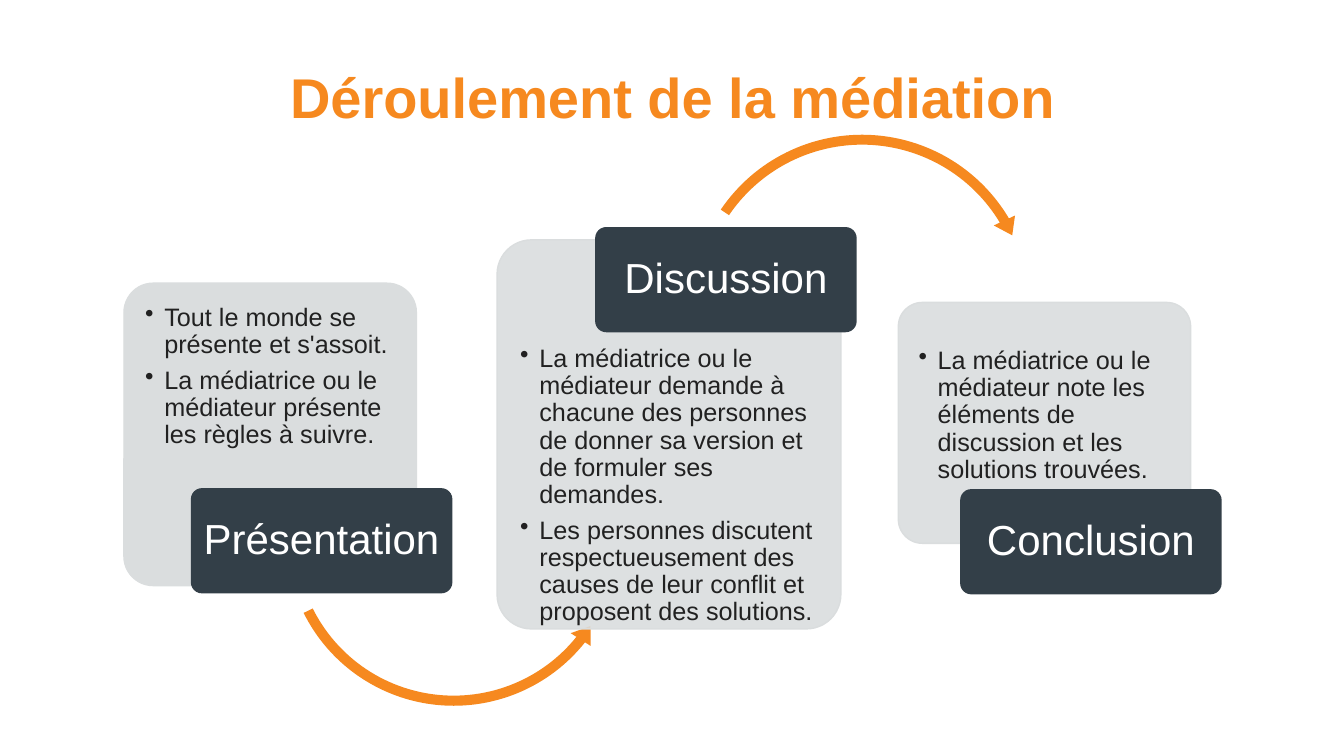
from lxml.etree import SubElement
from pptx import Presentation
from pptx.dml.color import RGBColor
from pptx.enum.shapes import MSO_SHAPE
from pptx.enum.text import MSO_ANCHOR, PP_ALIGN
from pptx.oxml.ns import qn
from pptx.util import Inches, Pt

ORANGE, GREY, NAVY, INK, WHITE = "F6891F", "DADDDE", "333F48", "212121", "FFFFFF"

STEPS = [
    dict(card=(1.23, 2.81, 2.9, 3), body=(0.07, 0.07, 2.76, 2.22),
         tag=(0.67, 2.04), name="Présentation", alpha=100,
         arrow=(MSO_SHAPE.LEFT_CIRCULAR_ARROW, (1.54, 0.8, 3.46, 3.46),
                (0.029, 3.537, 23.156, 92.108, 0.034)),
         lines=["Tout le monde se présente et s'assoit.",
                "La médiatrice ou le médiateur présente les règles à suivre."]),
    dict(card=(4.93, 2.38, 3.41, 3.86), body=(0.09, 0.91, 3.23, 2.86),
         tag=(0.98, -0.12), name="Discussion", alpha=90,
         arrow=(MSO_SHAPE.CIRCULAR_ARROW, (1.86, -1.11, 3.52, 3.52),
                (0.028, 3.476, 197.501, 128.487, 0.033)),
         lines=["La médiatrice ou le médiateur demande à chacune des personnes "
                "de donner sa version et de formuler ses demandes.",
                "Les personnes discutent respectueusement des causes de leur "
                "conflit et proposent des solutions."]),
    dict(card=(8.91, 3, 2.9, 2.39), body=(0.06, 0.31, 2.79, 1.52),
         tag=(0.62, 1.86), name="Conclusion", alpha=90, arrow=None,
         lines=["La médiatrice ou le médiateur note les éléments de discussion "
                "et les solutions trouvées."]),
]


def color(code):
    return RGBColor.from_string(code)


def inch(box):
    return [Inches(v) for v in box]


def shift(card, part):
    return (card[0] + part[0], card[1] + part[1], *part[2:])


def shape(slide, kind, box, fill, adjust, line=None, alpha=100):
    item = slide.shapes.add_shape(kind, *inch(box))
    item.shadow.inherit = False
    for i, value in enumerate(adjust):
        item.adjustments[i] = value
    item.fill.solid()
    item.fill.fore_color.rgb = color(fill)
    if alpha < 100:
        tone = item.fill._xPr.find(qn("a:solidFill"))[0]
        SubElement(tone, qn("a:alpha")).set("val", str(alpha * 1000))
    if line:
        item.line.color.rgb = color(line)
        item.line.width = Pt(1)
    else:
        item.line.fill.background()
    return item


def setup(frame, side, top, anchor):
    frame.word_wrap = True
    frame.margin_left = frame.margin_right = Inches(side)
    frame.margin_top = frame.margin_bottom = Inches(top)
    frame.vertical_anchor = anchor


def write(para, text, size, code, align=PP_ALIGN.LEFT, bold=False):
    para.alignment = align
    para.line_spacing = 0.9
    run = para.add_run()
    run.text = text
    run.font.name = "Arial"
    run.font.size = Pt(size)
    run.font.bold = bold
    run.font.color.rgb = color(code)


def bullet(para):
    props = para._p.get_or_add_pPr()
    props.set("marL", str(Inches(0.19)))
    props.set("indent", str(-Inches(0.19)))
    SubElement(props, qn("a:buChar")).set("char", "•")


def title(slide, box, text):
    frame = slide.shapes.add_textbox(*inch(box)).text_frame
    setup(frame, 0, 0, MSO_ANCHOR.TOP)
    write(frame.paragraphs[0], text, 40, ORANGE, PP_ALIGN.CENTER, True)


def step(slide, card, body, tag, name, alpha, arrow, lines):
    shape(slide, MSO_SHAPE.ROUNDED_RECTANGLE, card, GREY, [0.1], GREY, alpha)

    frame = slide.shapes.add_textbox(*inch(shift(card, body))).text_frame
    setup(frame, 0.14, 0.14, MSO_ANCHOR.TOP)
    for i, line in enumerate(lines):
        para = frame.add_paragraph() if i else frame.paragraphs[0]
        bullet(para)
        write(para, line, 18, INK)
        para.space_after = Pt(6)

    if arrow:
        kind, box, adjust = arrow
        shape(slide, kind, shift(card, box), ORANGE, adjust)

    label = shape(slide, MSO_SHAPE.ROUNDED_RECTANGLE,
                  shift(card, (*tag, 2.58, 1.03)), NAVY, [0.1], NAVY)
    setup(label.text_frame, 0.06, 0.07, MSO_ANCHOR.MIDDLE)
    write(label.text_frame.paragraphs[0], name, 30, WHITE, PP_ALIGN.CENTER)


def main():
    deck = Presentation()
    deck.slide_width, deck.slide_height = inch((13.33, 7.5))
    slide = deck.slides.add_slide(deck.slide_layouts[6])
    title(slide, (0.97, 0.7, 11.4, 1), "Déroulement de la médiation")
    for part in STEPS:
        step(slide, **part)
    deck.save("out.pptx")


if __name__ == "__main__":
    main()
